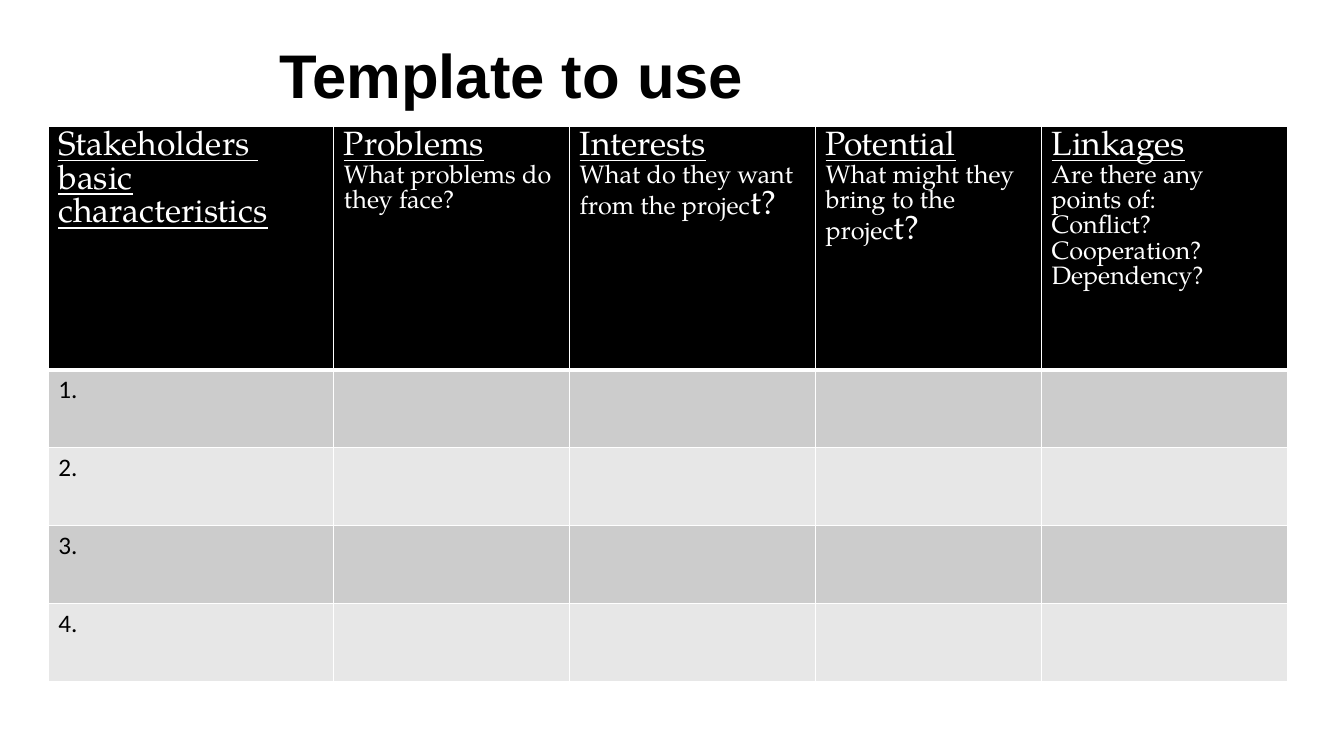
from lxml.etree import SubElement
from pptx import Presentation
from pptx.dml.color import RGBColor
from pptx.enum.text import MSO_ANCHOR
from pptx.oxml.ns import qn
from pptx.util import Inches, Pt

COLORS = {"ink": "000000", "paper": "FFFFFF", "band_dark": "CCCCCC", "band_light": "E7E7E7"}
SERIF = "TeX Gyre Pagella"
COL_WIDTHS = [2.83, 2.34, 2.44, 2.24, 2.44]
HEADER_HEIGHT, ROW_HEIGHT = 2.42, 0.774
HEADERS = [
    ("Stakeholders  basic characteristics", []),
    ("Problems", [["What problems do they face?"]]),
    ("Interests", [["What do they want from the projec", "t?"]]),
    ("Potential", [["What might they bring to the projec", "t?"]]),
    ("Linkages", [["Are there any points of:"], ["Conflict?"], ["Cooperation?"], ["Dependency?"]]),
]
STAKEHOLDERS = ["1.", "2.", "3.", "4."]


def rgb(name):
    return RGBColor.from_string(COLORS[name])


def set_font(font, name, size, color, bold=False, underline=False):
    font.name, font.size = name, Pt(size)
    font.bold, font.underline = bold, underline
    font.color.rgb = rgb(color)


def style_cell(cell, fill, bottom=1):
    tc_pr = cell._tc.get_or_add_tcPr()
    for side, width in (("L", 1), ("R", 1), ("T", 1), ("B", bottom)):
        ln = SubElement(tc_pr, qn(f"a:ln{side}"), w=str(Pt(width)))
        SubElement(SubElement(ln, qn("a:solidFill")), qn("a:srgbClr"), val=COLORS["paper"])
    cell.fill.solid()
    cell.fill.fore_color.rgb = rgb(fill)


def fill_header(cell, heading, lines):
    style_cell(cell, "ink", bottom=3)
    tf = cell.text_frame
    p = tf.paragraphs[0]
    p.text = heading
    set_font(p.font, SERIF, 24, "paper", underline=True)
    for line in lines:
        p = tf.add_paragraph()
        for text, size in zip(line, (18, 24)):
            r = p.add_run()
            r.text = text
            set_font(r.font, SERIF, size, "paper")


def add_title(s, left, top, width, height):
    tf = s.shapes.add_textbox(Inches(left), Inches(top), Inches(width), Inches(height)).text_frame
    tf.word_wrap = True
    tf.vertical_anchor = MSO_ANCHOR.MIDDLE
    p = tf.paragraphs[0]
    p.text = "Template to use"
    p.line_spacing = 0.9
    set_font(p.font, "Arial", 44, "ink", bold=True)


def add_stakeholder_table(s, left, top):
    height = HEADER_HEIGHT + ROW_HEIGHT * len(STAKEHOLDERS)
    table = s.shapes.add_table(
        len(STAKEHOLDERS) + 1, len(COL_WIDTHS),
        Inches(left), Inches(top), Inches(sum(COL_WIDTHS)), Inches(height),
    ).table
    table.first_row = table.horz_banding = False
    for column, width in zip(table.columns, COL_WIDTHS):
        column.width = Inches(width)
    for i, row in enumerate(table.rows):
        row.height = Inches(ROW_HEIGHT if i else HEADER_HEIGHT)
    for col, (heading, lines) in enumerate(HEADERS):
        fill_header(table.cell(0, col), heading, lines)
    for i, label in enumerate(STAKEHOLDERS, 1):
        for col in range(len(COL_WIDTHS)):
            style_cell(table.cell(i, col), "band_dark" if i % 2 else "band_light")
        p = table.cell(i, 0).text_frame.paragraphs[0]
        p.text = label
        set_font(p.font, "Calibri", 18, "ink")


def main():
    prs = Presentation()
    prs.slide_width, prs.slide_height = Inches(13.33), Inches(7.5)
    s = prs.slides.add_slide(prs.slide_layouts[6])
    add_title(s, 2.67, 0.3, 8.5, 0.95)
    add_stakeholder_table(s, 0.48, 1.25)
    prs.save("out.pptx")


if __name__ == "__main__":
    main()
